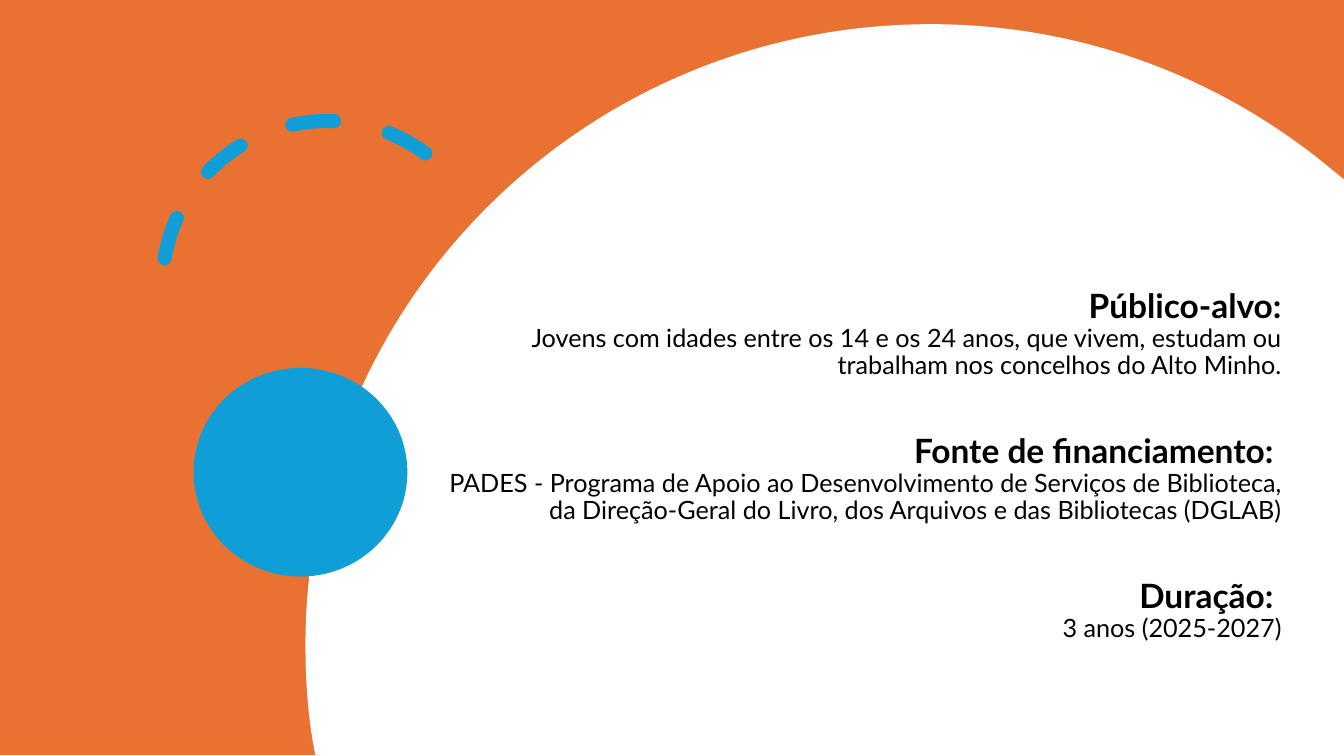
"""Build a slide on the audience, funding and duration of a youth project."""
import pptx
import pptx.dml.color
import pptx.enum.dml
import pptx.enum.shapes
import pptx.enum.text
import pptx.oxml
import pptx.oxml.ns
import pptx.oxml.xmlchemy
import pptx.util

Inches = pptx.util.Inches
Pt = pptx.util.Pt
MSO_SHAPE = pptx.enum.shapes.MSO_SHAPE

SECTIONS = [
    ("Público-alvo:",
     "Jovens com idades entre os 14 e os 24 anos, que vivem, estudam ou trabalham nos concelhos do Alto Minho."),
    ("Fonte de financiamento: ",
     "PADES - Programa de Apoio ao Desenvolvimento de Serviços de Biblioteca, "
     "da Direção-Geral do Livro, dos Arquivos e das Bibliotecas (DGLAB)"),
    ("Duração: ", "3 anos (2025-2027)"),
]

THEME = {
    "orange": "E97132", "white": "FFFFFF", "blue": "0F9ED5", "black": "000000",
    "font": "Lato", "heading": 23.9, "body": 18, "section_gap": 39, "arc_line": 10,
}

SLIDE_SIZE = (13.33, 7.5)
PANEL_START = (9.23, 0.24)
PANEL_SEGMENTS = [
    [(10.73, 0.24), (12.1, 0.77), (13.17, 1.65)],
    [(13.33, 1.78)],
    [(13.33, 7.5)],
    [(3.13, 7.5)],
    [(3.1, 7.34)],
    [(3.05, 7.03), (3.03, 6.72), (3.03, 6.4)],
    [(3.03, 3), (5.8, 0.24), PANEL_START],
]


def color(name):
    return pptx.dml.color.RGBColor.from_string(THEME[name])


def paint(shape, name):
    shape.shadow.inherit = False
    shape.fill.solid()
    shape.fill.fore_color.rgb = color(name)
    shape.line.fill.background()


def add_shape(page, kind, *place):
    return page.shapes.add_shape(kind, *map(Inches, place))


def add_panel(page):
    builder = page.shapes.build_freeform(*map(Inches, PANEL_START))
    builder.add_line_segments([tuple(map(Inches, segment[-1])) for segment in PANEL_SEGMENTS], close=True)
    panel = builder.convert_to_shape()
    paint(panel, "white")
    lines = list(panel._element.iter(pptx.oxml.ns.qn("a:lnTo")))
    for line, segment in zip(lines, PANEL_SEGMENTS):
        if len(segment) == 3:
            curve = pptx.oxml.xmlchemy.OxmlElement("a:cubicBezTo")
            for x, y in segment:
                point = pptx.oxml.xmlchemy.OxmlElement("a:pt")
                point.set("x", str(Inches(x) - panel.left))
                point.set("y", str(Inches(y) - panel.top))
                curve.append(point)
            line.getparent().replace(line, curve)


def add_dashed_arc(page):
    arc = add_shape(page, MSO_SHAPE.ARC, 1.61, 1.2, 3.27, 3.27)
    arc.shadow.inherit = False
    arc.rotation = 308.7
    arc.adjustments[0], arc.adjustments[1] = 144.555, 2.278
    arc.fill.background()
    arc.line.color.rgb = color("blue")
    arc.line.width = Pt(THEME["arc_line"])
    arc.line.dash_style = pptx.enum.dml.MSO_LINE.DASH
    arc.line._get_or_add_ln().set("cap", "rnd")


def add_sections(page):
    box = page.shapes.add_textbox(*map(Inches, (4.15, 1.97, 8.66, 4.46)))
    frame = box.text_frame
    frame.word_wrap = True
    frame.vertical_anchor = pptx.enum.text.MSO_ANCHOR.BOTTOM
    lines = [(text, role) for section in SECTIONS for text, role in zip(section, ("heading", "body"))]
    for index, (text, role) in enumerate(lines):
        para = frame.add_paragraph() if index else frame.paragraphs[0]
        para.text = text
        para.alignment = pptx.enum.text.PP_ALIGN.RIGHT
        para.line_spacing = 0.9
        para.space_before = Pt(THEME["section_gap"] if index and role == "heading" else 0)
        font = para.runs[0].font
        font.name = THEME["font"]
        font.size = Pt(THEME[role])
        font.bold = role == "heading"
        font.color.rgb = color("black")


def main():
    deck = pptx.Presentation()
    deck.slide_width, deck.slide_height = map(Inches, SLIDE_SIZE)
    page = deck.slides.add_slide(deck.slide_layouts[6])
    paint(add_shape(page, MSO_SHAPE.RECTANGLE, 0, -0.01, *SLIDE_SIZE), "orange")
    add_panel(page)
    paint(add_shape(page, MSO_SHAPE.OVAL, 1.92, 3.65, 2.12, 2.07), "blue")
    add_dashed_arc(page)
    add_sections(page)
    deck.save("out.pptx")


if __name__ == "__main__":
    main()
